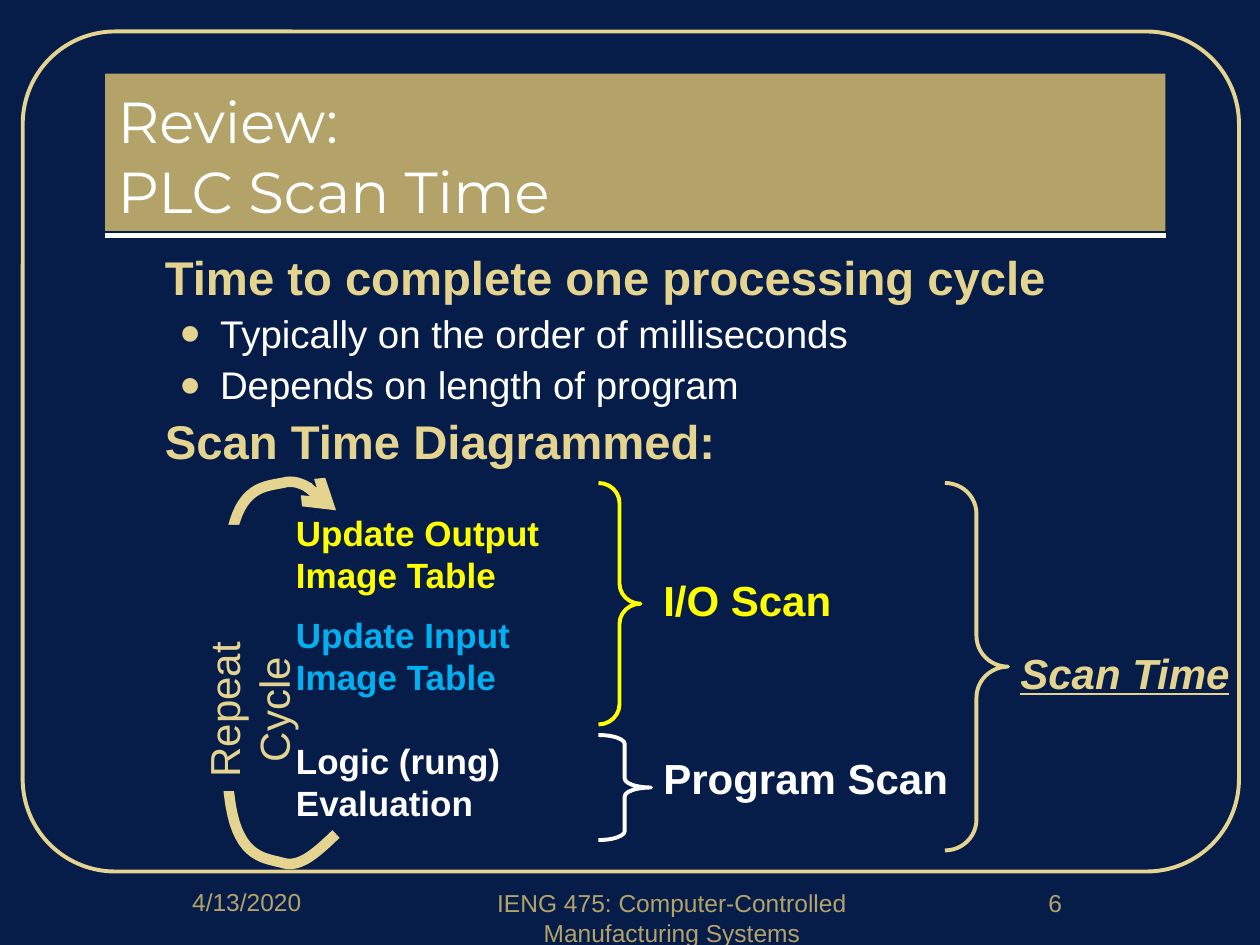
from dataclasses import dataclass
from typing import Optional

from lxml.etree import SubElement
from pptx import Presentation
from pptx.dml.color import RGBColor
from pptx.enum.shapes import MSO_CONNECTOR, MSO_SHAPE
from pptx.enum.text import MSO_ANCHOR, MSO_AUTO_SIZE, PP_ALIGN
from pptx.oxml.ns import qn
from pptx.util import Pt

COLORS = {
    "navy": "071D49", "gold": "B3A369", "sand": "E4D490",
    "white": "FFFFFF", "yellow": "FFFF00", "blue": "00B0F0",
}


@dataclass
class Box:
    left: float
    top: float
    width: float
    height: float

    def lengths(self) -> tuple:
        return Pt(self.left), Pt(self.top), Pt(self.width), Pt(self.height)


@dataclass
class Line:
    text: str
    size: float
    color: str
    bold: bool = False
    emphasis: bool = False
    font: str = "Arial"
    align: PP_ALIGN = PP_ALIGN.LEFT
    before: float = 0
    spacing: Optional[float] = None
    bullet: bool = False


@dataclass
class Brace:
    box: Box
    color: str
    curl: float


def rgb(name: str) -> RGBColor:
    return RGBColor.from_string(COLORS[name])


def place(shape, box: Box) -> None:
    shape.left, shape.top, shape.width, shape.height = box.lengths()


def add_run(paragraph, line: Line, text: str) -> None:
    run = paragraph.add_run()
    run.text = text
    font = run.font
    font.name, font.size, font.bold = line.font, Pt(line.size), line.bold
    font.color.rgb = rgb(line.color)
    if line.emphasis:
        font.italic = font.underline = True


def write(text_frame, lines: list[Line]) -> None:
    text_frame.word_wrap = True
    text_frame.auto_size = MSO_AUTO_SIZE.NONE
    for index, line in enumerate(lines):
        paragraph = text_frame.add_paragraph() if index else text_frame.paragraphs[0]
        paragraph.alignment = line.align
        paragraph.space_before = Pt(line.before)
        if line.spacing:
            paragraph.line_spacing = line.spacing
        for number, part in enumerate(line.text.split("\n")):
            if number:
                paragraph.add_line_break()
            add_run(paragraph, line, part)


def add_text(slide, box: Box, lines: list[Line]):
    shape = slide.shapes.add_textbox(*box.lengths())
    write(shape.text_frame, lines)
    return shape


def set_bullet(paragraph, margin: float, indent: float, bullet: bool) -> None:
    properties = paragraph._p.get_or_add_pPr()
    properties.set("marL", str(Pt(margin)))
    properties.set("indent", str(Pt(indent)))
    if not bullet:
        SubElement(properties, qn("a:buNone"))
        return
    color = SubElement(properties, qn("a:buClr"))
    SubElement(color, qn("a:srgbClr"), val=COLORS["sand"])
    SubElement(properties, qn("a:buSzPct"), val="150000")
    SubElement(properties, qn("a:buFont"), typeface="Arial")
    SubElement(properties, qn("a:buChar"), char="•")


def outline(shape, color: str, width: float) -> None:
    shape.shadow.inherit = False
    shape.fill.background()
    shape.line.color.rgb = rgb(color)
    shape.line.width = Pt(width)


def add_brace(slide, brace: Brace) -> None:
    shape = slide.shapes.add_shape(MSO_SHAPE.RIGHT_BRACE, *brace.box.lengths())
    shape.adjustments[0], shape.adjustments[1] = brace.curl, 0.5
    outline(shape, brace.color, 2.25)


def bezier(points: list[tuple], steps: int = 16) -> list[tuple]:
    """Sample a chain of cubic curves; each curve starts where the last one ends."""
    samples = []
    for first in range(0, len(points) - 1, 3):
        corners = points[first:first + 4]
        for step in range(1, steps + 1):
            t = step / steps
            weights = ((1 - t) ** 3, 3 * t * (1 - t) ** 2, 3 * t * t * (1 - t), t ** 3)
            samples.append(tuple(
                Pt(sum(w * corner[axis] for w, corner in zip(weights, corners)))
                for axis in (0, 1)))
    return samples


def add_cycle_arrow(slide) -> None:
    points = [(192, 476.6), (182, 486), (172, 496), (162, 493.2),
              (152, 490.3), (136.8, 491), (131.8, 460.1),
              (126.7, 429.8), (126.7, 339), (131.8, 308.2),
              (136.8, 277.2), (152, 278), (162, 275.8),
              (172, 272.9), (182, 282.2), (192, 291.6)]
    start_x, start_y = points[0]
    builder = slide.shapes.build_freeform(Pt(start_x), Pt(start_y), 1.0)
    builder.add_line_segments(bezier(points), close=False)
    arrow = builder.convert_to_shape()
    outline(arrow, "sand", 6)
    line = arrow.line._get_or_add_ln()
    SubElement(line, qn("a:round"))
    SubElement(line, qn("a:tailEnd"), type="arrow")


def main() -> None:
    presentation = Presentation()
    presentation.slide_width, presentation.slide_height = Pt(720), Pt(540)
    slide = presentation.slides.add_slide(presentation.slide_layouts[1])
    slide.background.fill.solid()
    slide.background.fill.fore_color.rgb = rgb("navy")

    # Frame and title rule
    frame = slide.shapes.add_shape(
        MSO_SHAPE.ROUNDED_RECTANGLE, *Box(13, 18, 695, 480).lengths())
    frame.adjustments[0] = 0.11
    outline(frame, "sand", 2.25)
    rule = slide.shapes.add_connector(
        MSO_CONNECTOR.STRAIGHT, Pt(60), Pt(134.6), Pt(666), Pt(134.6))
    rule.line.color.rgb = rgb("white")
    rule.line.width = Pt(3)
    SubElement(rule._element.spPr, qn("a:effectLst"))

    # Title
    title = slide.shapes.title
    place(title, Box(60, 42, 606, 90))
    title.fill.solid()
    title.fill.fore_color.rgb = rgb("gold")
    title.text_frame.vertical_anchor = MSO_ANCHOR.BOTTOM
    write(title.text_frame,
          [Line("Review:\nPLC Scan Time", 33, "white", font="Montserrat")])

    # Body list
    body = slide.placeholders[1]
    place(body, Box(60, 142, 606, 122))
    lines = [
        Line("Time to complete one processing cycle", 27, "sand", True, spacing=0.9),
        Line("Typically on the order of milliseconds", 22, "white",
             before=5.5, spacing=0.9, bullet=True),
        Line("Depends on length of program", 22, "white",
             before=5.5, spacing=0.9, bullet=True),
        Line("Scan Time Diagrammed:", 27, "sand", True, before=6.2, spacing=0.9),
    ]
    write(body.text_frame, lines)
    for paragraph, line in zip(body.text_frame.paragraphs, lines):
        paragraph.level = int(line.bullet)
        set_bullet(paragraph, *((58.5, -22.5) if line.bullet else (27, 0)), line.bullet)

    # Scan steps and the names of their groups
    add_text(slide, Box(162, 288.7, 192, 190), [
        Line("Update Output Image Table", 20, "yellow", True, spacing=Pt(24)),
        Line("Update Input Image Table", 20, "blue", True, before=10, spacing=Pt(24)),
        Line("Logic (rung) Evaluation", 20, "white", True, before=24, spacing=Pt(24)),
    ])
    add_text(slide, Box(372, 324.7, 186, 36), [Line("I/O Scan", 24, "yellow", True)])
    add_text(slide, Box(372, 426.7, 186, 36), [Line("Program Scan", 24, "white", True)])
    add_text(slide, Box(576, 366.5, 144, 36),
             [Line("Scan Time", 24, "sand", True, emphasis=True)])

    # Braces
    for brace in (Brace(Box(342, 276, 24, 138), "yellow", 0.48),
                  Brace(Box(342, 420, 30, 60), "white", 0.17),
                  Brace(Box(540, 276, 36, 210), "sand", 0.49)):
        add_brace(slide, brace)

    # Repeat arrow, interrupted by its label
    add_cycle_arrow(slide)
    gap = slide.shapes.add_shape(MSO_SHAPE.RECTANGLE, *Box(108, 300, 43, 152).lengths())
    gap.shadow.inherit = False
    gap.fill.solid()
    gap.fill.fore_color.rgb = rgb("navy")
    gap.line.fill.background()
    label = add_text(slide, Box(92, 373.5, 100, 64),
                     [Line("Repeat Cycle", 24, "sand", align=PP_ALIGN.CENTER,
                           spacing=Pt(28.5))])
    label.rotation = 270

    # Footer
    for text, box in (
            ("4/13/2020", Box(60, 503.3, 162, 36)),
            ("IENG 475: Computer-Controlled Manufacturing Systems",
             Box(258, 504, 252, 36)),
            ("6", Box(540, 504, 126, 36))):
        add_text(slide, box, [Line(text, 14, "gold", align=PP_ALIGN.CENTER)])

    presentation.save("out.pptx")


if __name__ == "__main__":
    main()
